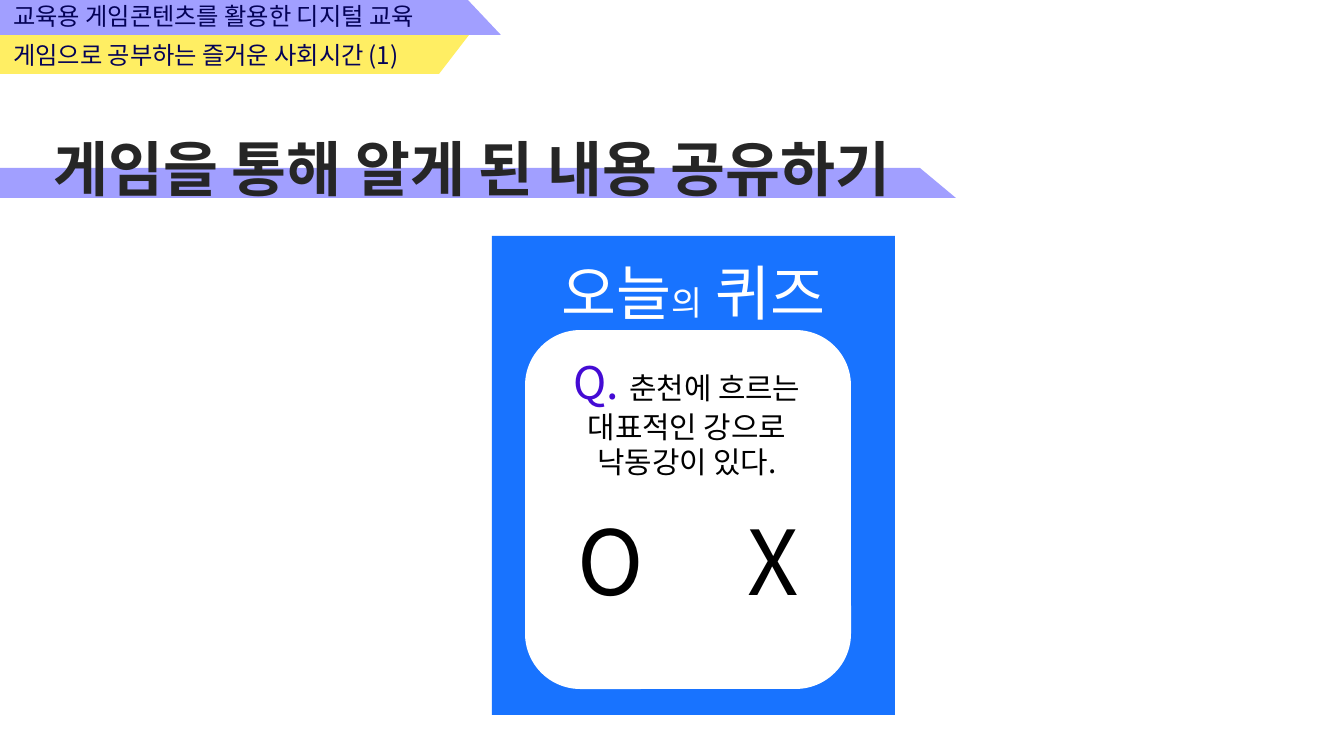
from lxml import etree
from pptx import Presentation
from pptx.dml.color import RGBColor
from pptx.enum.shapes import MSO_SHAPE
from pptx.enum.text import MSO_AUTO_SIZE, PP_ALIGN
from pptx.oxml.ns import qn
from pptx.util import Pt

PX = 914400 / 134.4
FONT = "Noto Sans CJK KR"
LEFT, CENTER = PP_ALIGN.LEFT, PP_ALIGN.CENTER
RECT, ROUNDED = MSO_SHAPE.RECTANGLE, MSO_SHAPE.ROUNDED_RECTANGLE
FIT = MSO_AUTO_SIZE.SHAPE_TO_FIT_TEXT
COLORS = {"yellow": "FFEE63", "lilac": "A19FFF", "navy": "040257",
          "dark": "262626", "blue": "1873FF", "violet": "440BD4",
          "black": "000000", "white": "FFFFFF"}


def emu(*lengths):
    return [round(n * PX) for n in lengths]


def paint(s, color):
    s.shadow.inherit = False
    s.fill.solid()
    s.fill.fore_color.rgb = RGBColor.from_string(COLORS[color])
    s.line.fill.background()


prs = Presentation()
prs.slide_width, prs.slide_height = emu(1344, 756)
slide = prs.slides.add_slide(prs.slide_layouts[6])

# Slanted bands: top, bottom, right end of the top edge, of the bottom edge
for top, bottom, top_right, bottom_right, color in [
    (35, 74, 469, 439, "yellow"),
    (0, 35, 468, 501, "lilac"),
    (168, 198, 920, 956, "lilac"),
]:
    band = slide.shapes.build_freeform(0, top, scale=PX)
    band.add_line_segments(
        [(top_right, top), (bottom_right, bottom), (0, bottom)], close=True)
    paint(band.convert_to_shape(), color)

# Quiz card with a rounded white panel
paint(slide.shapes.add_shape(RECT, *emu(492, 236, 403, 479)), "blue")
panel = slide.shapes.add_shape(ROUNDED, *emu(525, 330, 326, 359))
panel.adjustments[0] = 0.17
paint(panel, "white")

# Texts: box, alignment, bold, runs of (text, size, colour)
for box, align, bold, runs in [
    ((0, 34, 437, 43), LEFT, False,
     [("게임으로 공부하는 즐거운 사회시간 (1)", 13, "navy")]),
    ((0, -5, 448, 43), LEFT, False,
     [("교육용 게임콘텐츠를 활용한 디지털 교육", 13, "navy")]),
    ((40, 125, 903, 86), LEFT, True,
     [("게임을 통해 알게 된 내용 공유하기", 32, "dark")]),
    ((492, 249, 403, 86), CENTER, False,
     [("오늘", 32, "white"), ("의", 18, "white"), (" 퀴즈", 32, "white")]),
    ((525, 348, 324, 140), CENTER, False,
     [("Q. ", 24, "violet"),
      ("춘천에 흐르는 대표적인 강으로 낙동강이 있다.", 16, "black")]),
    ((525, 499, 172, 122), CENTER, False, [("O", 48, "black")]),
    ((697, 499, 152, 122), CENTER, False, [("X", 48, "black")]),
]:
    tf = slide.shapes.add_textbox(*emu(*box)).text_frame
    tf.word_wrap = True
    tf.auto_size = FIT
    p = tf.paragraphs[0]
    p.alignment = align
    for text, size, color in runs:
        r = p.add_run()
        r.text = text
        r.font.size = Pt(size)
        r.font.bold = bold
        r.font.color.rgb = RGBColor.from_string(COLORS[color])
        r.font.name = FONT
        # Hangul takes the East Asian typeface
        etree.SubElement(r.font._element, qn("a:ea"), typeface=FONT)

prs.save("out.pptx")
